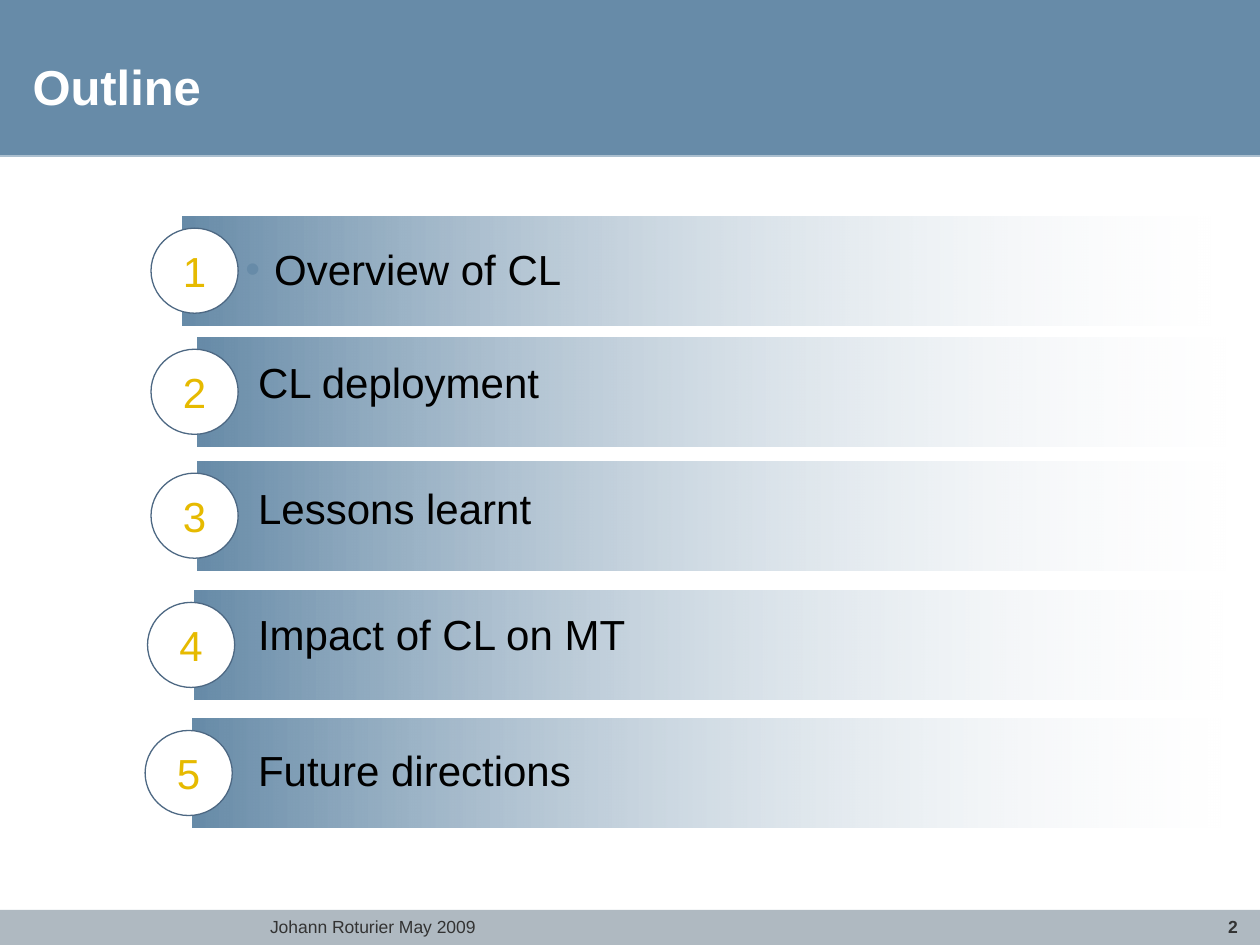
import dataclasses

import lxml.etree
import pptx
import pptx.dml.color
import pptx.enum.shapes
import pptx.enum.text
import pptx.oxml.ns
import pptx.util

Pt = pptx.util.Pt
Align = pptx.enum.text.PP_ALIGN
Anchor = pptx.enum.text.MSO_ANCHOR
Preset = pptx.enum.shapes.MSO_SHAPE
qn = pptx.oxml.ns.qn


@dataclasses.dataclass(frozen=True)
class Theme:
    font: str = "Arial"
    title_size: float = 28
    body_size: float = 24
    footer_size: float = 10
    blue: str = "678BA8"
    footer_band: str = "AFB9C1"
    rule: str = "ABBFCF"
    outline: str = "4D6883"
    gold: str = "E6BA00"
    white: str = "FFFFFF"
    black: str = "000000"
    footer_text: str = "333333"


def rgb(color):
    return pptx.dml.color.RGBColor.from_string(color)


class SlideBuilder:
    def __init__(self, slide, theme):
        self.slide = slide
        self.theme = theme

    def shape(self, preset, bounds, fill, line=None):
        shape = self.slide.shapes.add_shape(preset, *map(Pt, bounds))
        shape.shadow.inherit = False
        shape.fill.solid()
        shape.fill.fore_color.rgb = rgb(fill)
        if line:
            shape.line.color.rgb = rgb(line)
            shape.line.width = Pt(0.75)
        else:
            shape.line.fill.background()
        return shape

    def rule(self, left, top, right):
        rule = self.slide.shapes.add_connector(
            pptx.enum.shapes.MSO_CONNECTOR.STRAIGHT, Pt(left), Pt(top), Pt(right), Pt(top))
        rule.line.color.rgb = rgb(self.theme.rule)
        rule.line.width = Pt(0.75)
        lxml.etree.SubElement(rule._element.spPr, qn("a:effectLst"))

    def bar(self, bounds):
        bar = self.shape(Preset.RECTANGLE, bounds, self.theme.blue)
        bar.fill.gradient()
        bar.fill.gradient_angle = 0
        for stop, color in zip(bar.fill.gradient_stops, (self.theme.blue, self.theme.white)):
            stop.color.rgb = rgb(color)
        last_color = bar._element.spPr.findall(".//" + qn("a:srgbClr"))[-1]
        lxml.etree.SubElement(last_color, qn("a:alpha"), val="18000")
        return bar

    def fill_text(self, shape, text, size, color, bold=False, align=Align.LEFT,
                  anchor=Anchor.MIDDLE, insets=(7.2, 3.6, 7.2, 3.6), wrap=True,
                  spacing=None, bullet=False):
        frame = shape.text_frame
        frame.word_wrap = wrap
        frame.vertical_anchor = anchor
        frame.margin_left, frame.margin_top, frame.margin_right, frame.margin_bottom = map(Pt, insets)
        para = frame.paragraphs[0]
        para.alignment = align
        if spacing:
            para.line_spacing = spacing
        if bullet:
            self.bullet(para)
        span = para.add_run()
        span.text = text
        span.font.name = self.theme.font
        span.font.size = Pt(size)
        span.font.bold = bold
        span.font.color.rgb = rgb(color)

    def bullet(self, para):
        properties = para._p.get_or_add_pPr()
        properties.set("marL", str(Pt(16.5)))
        properties.set("indent", str(-Pt(16.5)))
        color = lxml.etree.SubElement(properties, qn("a:buClr"))
        lxml.etree.SubElement(color, qn("a:srgbClr"), val=self.theme.blue)
        lxml.etree.SubElement(properties, qn("a:buFont"), typeface=self.theme.font)
        lxml.etree.SubElement(properties, qn("a:buChar"), char="•")

    def text(self, bounds, text, size, color, **style):
        box = self.slide.shapes.add_textbox(*map(Pt, bounds))
        self.fill_text(box, text, size, color, **style)

    def badge(self, bounds, number):
        circle = self.shape(Preset.OVAL, bounds, self.theme.white, self.theme.outline)
        self.fill_text(circle, str(number), self.theme.body_size, self.theme.gold, align=Align.CENTER)


def main():
    theme = Theme()
    deck = pptx.Presentation()
    deck.slide_width, deck.slide_height = Pt(720), Pt(540)
    page = SlideBuilder(deck.slides.add_slide(deck.slide_layouts[6]), theme)

    page.shape(Preset.RECTANGLE, (0, 520, 720, 20), theme.footer_band)
    page.shape(Preset.RECTANGLE, (0, 0, 720, 88.6), theme.blue)
    page.rule(0, 89.2, 720)
    footer = dict(insets=(0, 0, 0, 0), wrap=False)
    page.text((154, 523.5, 118, 12.2), "Johann Roturier May 2009", theme.footer_size,
              theme.footer_text, align=Align.CENTER, **footer)
    page.text((701.8, 523.5, 6, 12.2), "2", theme.footer_size, theme.footer_text, bold=True, **footer)
    page.text((11.5, 28.8, 528, 41), "Outline", theme.title_size, theme.white, bold=True)

    topics = [
        ("Overview of CL", 104.2, 123.6, 86.3, None),
        ("CL deployment", 113, 192.8, 86.3, 202.3),
        ("Lessons learnt", 113, 263.6, 86.3, 274.3),
        ("Impact of CL on MT", 111, 337.4, 84.3, 346.3),
        ("Future directions", 109.9, 410.6, 82.9, 421.9),
    ]
    for number, (topic, bar_left, bar_top, badge_left, label_top) in enumerate(topics, 1):
        bar = page.bar((bar_left, bar_top, 587.5, 62.2))
        page.badge((badge_left, bar_top + 6.8, 49.8, 48.6), number)
        if label_top is None:
            page.fill_text(bar, topic, theme.body_size, theme.black, spacing=0.95, bullet=True,
                           insets=(36, 3.6, 7.2, 3.6))
        else:
            page.text((140.4, label_top, 400, 36), topic, theme.body_size, theme.black,
                      anchor=Anchor.TOP, spacing=None if number == len(topics) else 0.95)

    deck.save("out.pptx")


if __name__ == "__main__":
    main()
